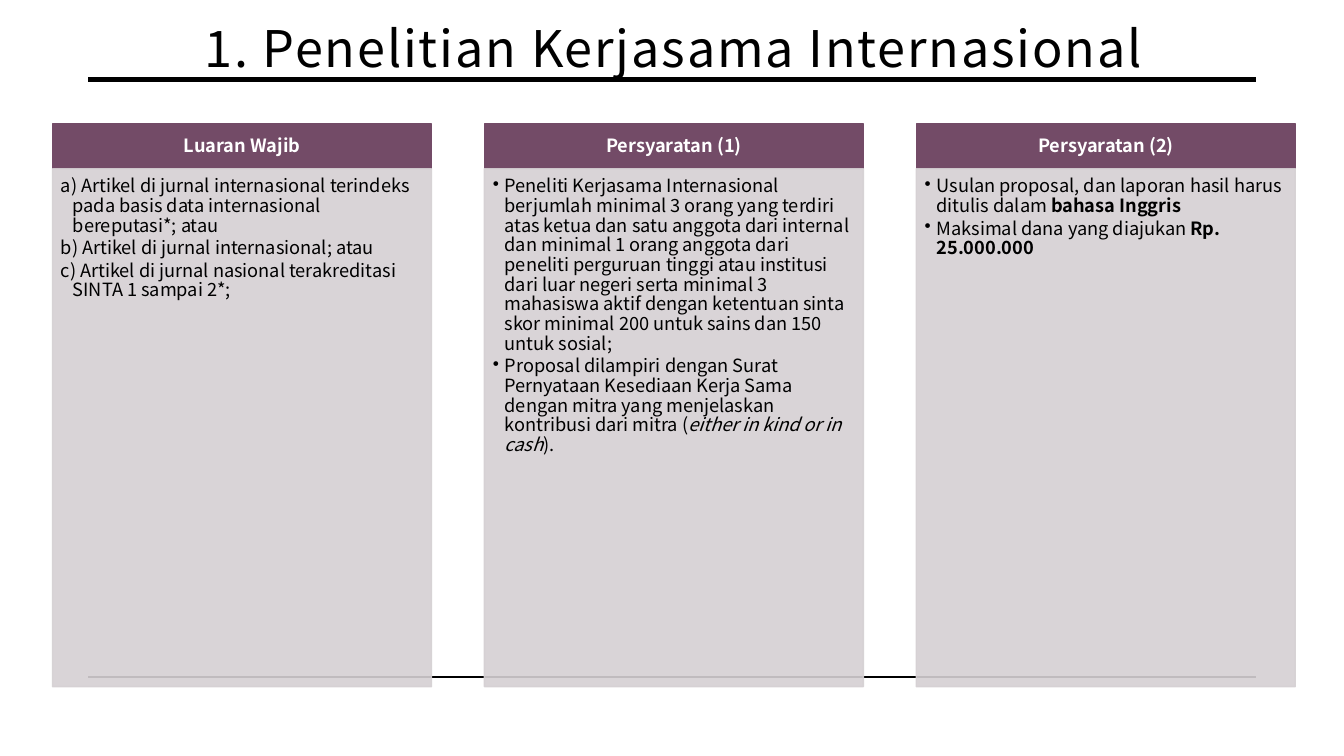
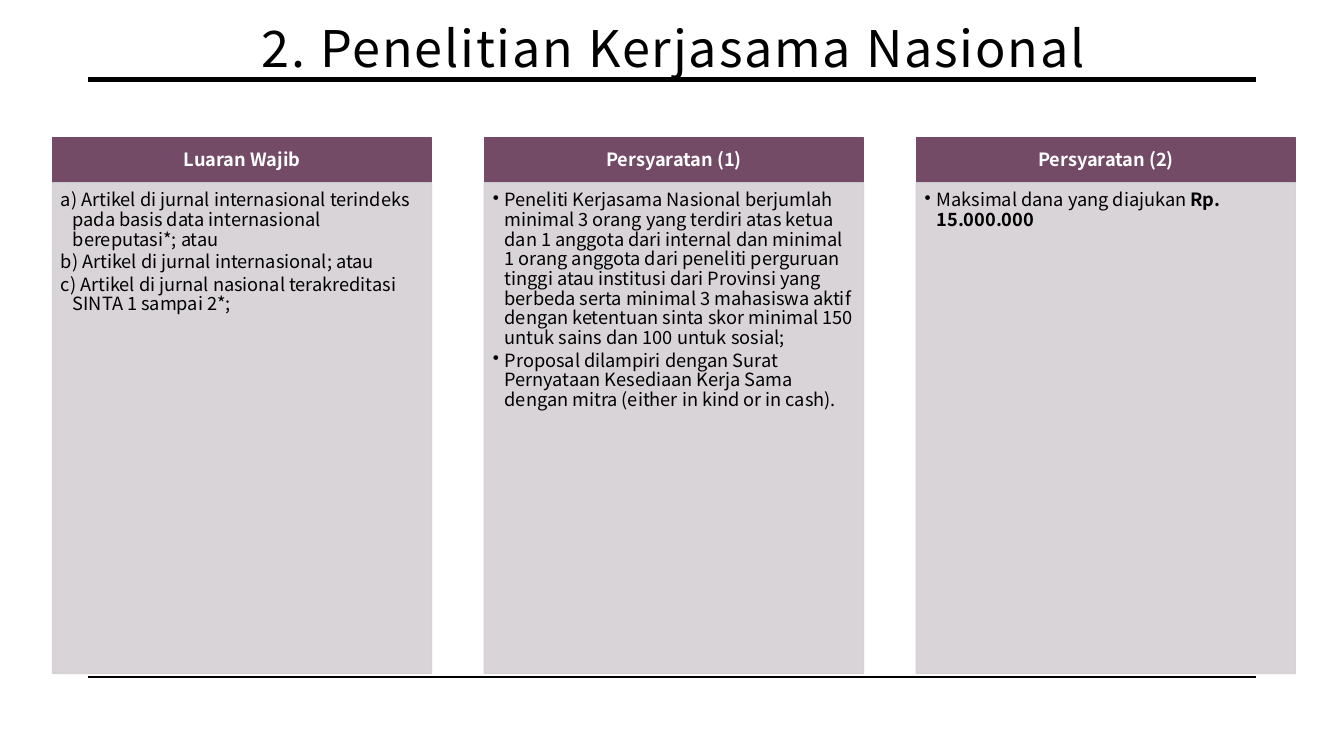
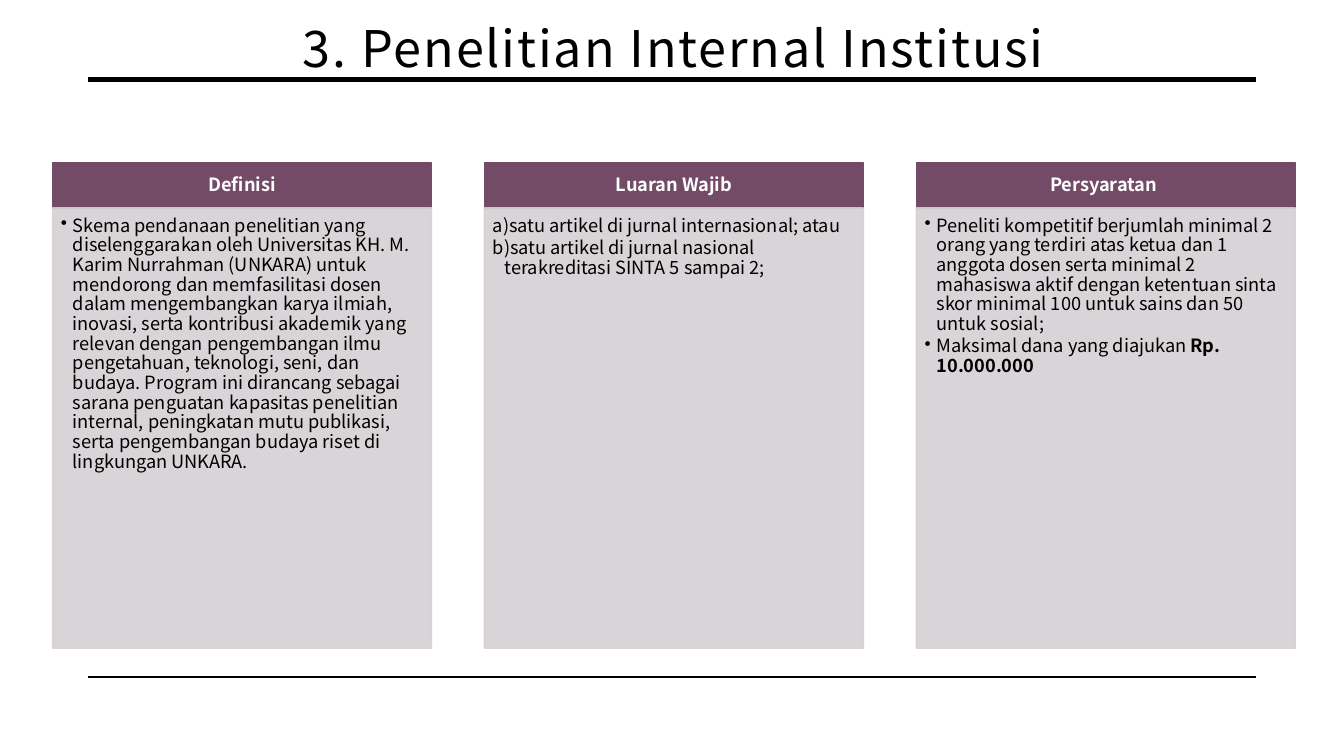
from lxml.etree import SubElement
from pptx import Presentation
from pptx.dml.color import RGBColor
from pptx.enum.shapes import MSO_CONNECTOR as CONNECTOR, MSO_SHAPE as SHAPE
from pptx.enum.text import MSO_ANCHOR as ANCHOR, MSO_AUTO_SIZE as AUTO_SIZE, PP_ALIGN as ALIGN
from pptx.oxml.ns import qn
from pptx.util import Pt

BLACK = RGBColor(0x00, 0x00, 0x00)
WHITE = RGBColor(0xFF, 0xFF, 0xFF)
PLUM = RGBColor(0x73, 0x4B, 0x67)
MIST = RGBColor(0xD5, 0xD0, 0xD3)
FONT = "Noto Sans CJK JP"

# Shared measures, in points
SLIDE_WIDTH, SLIDE_HEIGHT = 960, 540
RULE_LEFT, RULE_RIGHT = 63, 897
RULES = [(56.75, 3.5), (483.5, 1)]  # height on the slide, line width
COLUMN_LEFT, COLUMN_WIDTH, COLUMN_PITCH = 37.5, 270.75, 308.5
HEADER_HEIGHT = 32
HANGING = 8.5

# Contents: a column is (heading, bullet kind, items); an item is a list of (text, style)
LETTERS, DOTS = "letters", "dots"
ARTICLES = [
    [(" Artikel di jurnal internasional terindeks pada basis data internasional "
      "bereputasi*; atau", "")],
    [(" Artikel di jurnal internasional; atau", "")],
    [(" Artikel di jurnal nasional terakreditasi SINTA 1 sampai 2*;", "")],
]
FUNDING = "Maksimal dana yang diajukan "

SCHEMES = [
    ("1. Penelitian Kerjasama Internasional", 88.5, 370, [
        ("Luaran Wajib", LETTERS, ARTICLES),
        ("Persyaratan (1)", DOTS, [
            [("Peneliti Kerjasama Internasional berjumlah minimal 3 orang yang terdiri atas "
              "ketua dan satu anggota dari internal dan minimal 1 orang anggota dari peneliti "
              "perguruan tinggi atau institusi dari luar negeri serta minimal 3 mahasiswa aktif "
              "dengan ketentuan sinta skor minimal 200 untuk sains dan 150 untuk sosial;", "")],
            [("Proposal dilampiri dengan Surat Pernyataan Kesediaan Kerja Sama dengan mitra "
              "yang menjelaskan kontribusi dari mitra (", ""),
             ("either in kind or in cash", "italic"), (").", "")],
        ]),
        ("Persyaratan (2)", DOTS, [
            [("Usulan proposal, dan laporan hasil harus ditulis dalam ", ""),
             ("bahasa Inggris", "bold")],
            [(FUNDING, ""), ("Rp. 25.000.000", "bold")],
        ]),
    ]),
    ("2. Penelitian Kerjasama Nasional", 98.5, 350.5, [
        ("Luaran Wajib", LETTERS, ARTICLES),
        ("Persyaratan (1)", DOTS, [
            [("Peneliti Kerjasama Nasional berjumlah minimal 3 orang yang terdiri atas ketua "
              "dan 1 anggota dari internal dan minimal 1 orang anggota dari peneliti perguruan "
              "tinggi atau institusi dari Provinsi yang berbeda serta minimal 3 mahasiswa aktif "
              "dengan ketentuan sinta skor minimal 150 untuk sains dan 100 untuk sosial;", "")],
            [("Proposal dilampiri dengan Surat Pernyataan Kesediaan Kerja Sama dengan mitra "
              "(either in kind or in cash).", "")],
        ]),
        ("Persyaratan (2)", DOTS, [[(FUNDING, ""), ("Rp. 15.000.000", "bold")]]),
    ]),
    ("3. Penelitian Internal Institusi", 116.5, 314.5, [
        ("Definisi", DOTS, [
            [("Skema pendanaan penelitian yang diselenggarakan oleh Universitas KH. M. "
              "Karim Nurrahman (UNKARA) untuk mendorong dan memfasilitasi dosen dalam "
              "mengembangkan karya ilmiah, inovasi, serta kontribusi akademik yang relevan "
              "dengan pengembangan ilmu pengetahuan, teknologi, seni, dan budaya. Program ini "
              "dirancang sebagai sarana penguatan kapasitas penelitian internal, peningkatan "
              "mutu publikasi, serta pengembangan budaya riset di lingkungan UNKARA.", "")],
        ]),
        ("Luaran Wajib", LETTERS, [
            [("satu artikel di jurnal internasional; atau", "")],
            [("satu artikel di jurnal nasional terakreditasi SINTA 5 sampai 2;", "")],
        ]),
        ("Persyaratan ", DOTS, [
            [("Peneliti kompetitif berjumlah minimal 2 orang yang terdiri atas ketua dan 1 "
              "anggota dosen serta minimal 2 mahasiswa aktif dengan ketentuan sinta skor "
              "minimal 100 untuk sains dan 50 untuk sosial;", "")],
            [(FUNDING, ""), ("Rp. 10.000.000", "bold")],
        ]),
    ]),
]


def add_panel(slide, left, top, height, color, anchor, insets):
    """Add one filled rectangle of a column and return it."""
    shape = slide.shapes.add_shape(
        SHAPE.RECTANGLE, Pt(left), Pt(top), Pt(COLUMN_WIDTH), Pt(height))
    shape.shadow.inherit = False
    shape.fill.solid()
    shape.fill.fore_color.rgb = color
    shape.line.color.rgb = color
    shape.line.width = Pt(1)
    set_frame(shape.text_frame, anchor, insets)
    return shape


def set_frame(frame, anchor, insets):
    """Set wrapping, anchor and the left, top, right and bottom insets."""
    frame.word_wrap = True
    frame.auto_size = AUTO_SIZE.NONE
    frame.vertical_anchor = anchor
    (frame.margin_left, frame.margin_top,
     frame.margin_right, frame.margin_bottom) = [Pt(inset) for inset in insets]


presentation = Presentation()
presentation.slide_width = Pt(SLIDE_WIDTH)
presentation.slide_height = Pt(SLIDE_HEIGHT)
title_only = presentation.slide_layouts[5]

for title_text, top, body_height, columns in SCHEMES:
    slide = presentation.slides.add_slide(title_only)

    # Title
    title = slide.shapes.title
    title.left, title.top, title.width, title.height = Pt(60.5), Pt(0), Pt(842), Pt(79)
    set_frame(title.text_frame, ANCHOR.TOP, (9, 8.25, 9, 7))
    paragraph = title.text_frame.paragraphs[0]
    paragraph.alignment = ALIGN.CENTER
    paragraph.line_spacing = 1.1
    paragraph.font.name = FONT
    paragraph.font.size = Pt(36)
    paragraph.font.color.rgb = BLACK
    run = paragraph.add_run()
    run.text = title_text
    run.font._element.set("spc", "130")

    # Rules under the title and above the foot
    for rule_top, rule_width in RULES:
        rule = slide.shapes.add_connector(
            CONNECTOR.STRAIGHT, Pt(RULE_LEFT), Pt(rule_top), Pt(RULE_RIGHT), Pt(rule_top))
        rule.line.color.rgb = BLACK
        rule.line.width = Pt(rule_width)
        SubElement(rule._element.spPr, qn("a:effectLst"))

    for index, (heading, bullet_kind, items) in enumerate(columns):
        left = COLUMN_LEFT + index * COLUMN_PITCH

        # Column header
        header = add_panel(slide, left, top, HEADER_HEIGHT, PLUM, ANCHOR.MIDDLE, (7, 4, 7, 4))
        paragraph = header.text_frame.paragraphs[0]
        paragraph.text = heading
        paragraph.alignment = ALIGN.CENTER
        paragraph.line_spacing = 0.9
        paragraph.font.name = FONT
        paragraph.font.size = Pt(13)
        paragraph.font.bold = True
        paragraph.font.color.rgb = WHITE

        # Column body, slightly transparent
        body = add_panel(slide, left, top + HEADER_HEIGHT, body_height, MIST,
                         ANCHOR.TOP, (6, 6, 7, 8))
        for color in body._element.spPr.iter(qn("a:srgbClr")):
            SubElement(color, qn("a:alpha"), val="90000")

        # List items
        frame = body.text_frame
        for number, item in enumerate(items):
            paragraph = frame.add_paragraph() if number else frame.paragraphs[0]
            properties = paragraph._p.get_or_add_pPr()
            properties.set("marL", str(Pt(HANGING)))
            properties.set("indent", str(-Pt(HANGING)))
            if bullet_kind == LETTERS:
                SubElement(properties, qn("a:buAutoNum"), type="alphaLcParenR")
            else:
                SubElement(properties, qn("a:buChar"), char="•")
            paragraph.alignment = ALIGN.LEFT
            paragraph.line_spacing = 0.9
            paragraph.space_after = Pt(2)
            paragraph.font.name = FONT
            paragraph.font.size = Pt(13)
            paragraph.font.color.rgb = BLACK
            for text, style in item:
                run = paragraph.add_run()
                run.text = text
                if style == "bold":
                    run.font.bold = True
                elif style == "italic":
                    run.font.italic = True

presentation.save("out.pptx")
